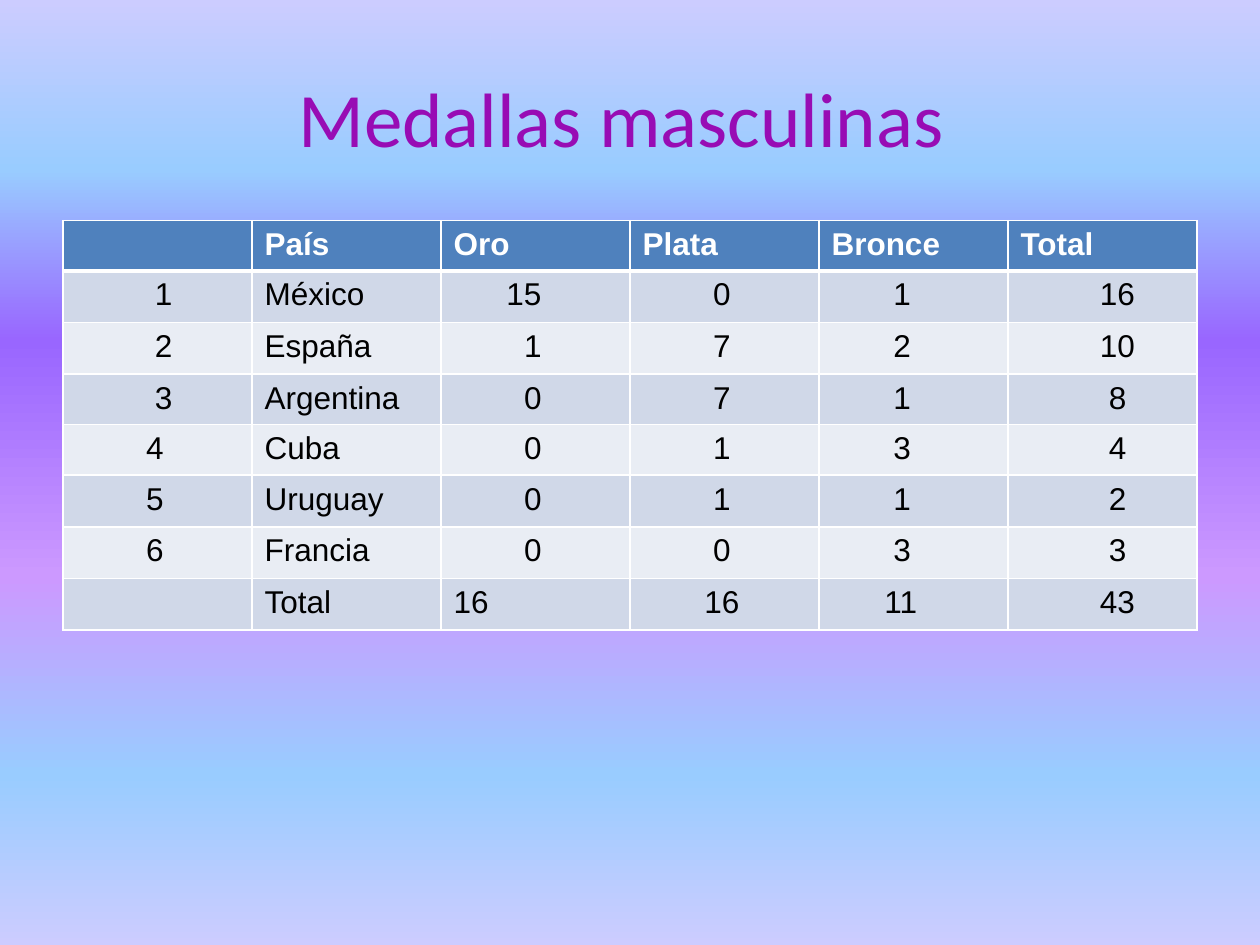
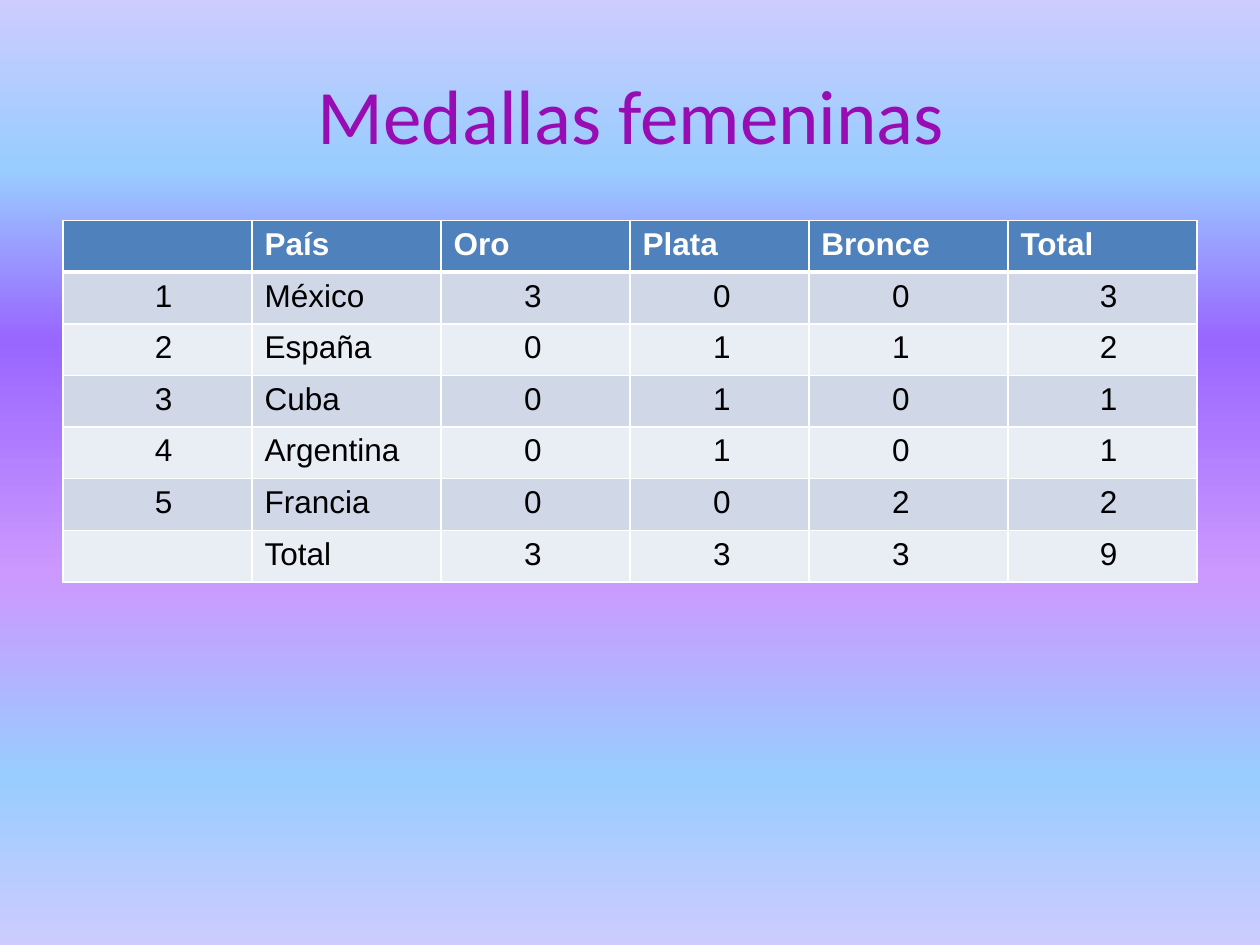
from dataclasses import dataclass, field

from lxml.etree import SubElement
from pptx import Presentation
from pptx.dml.color import RGBColor
from pptx.enum.text import MSO_ANCHOR, PP_ALIGN
from pptx.oxml.ns import qn
from pptx.slide import Slide, SlideMaster
from pptx.table import _Cell
from pptx.text.text import _Paragraph
from pptx.util import Emu, Pt

PX = 9144  # one px is a hundredth of an inch

PURPLE = RGBColor(0x98, 0x0C, 0xB4)
HEADER_BLUE = RGBColor(0x4F, 0x81, 0xBD)
BAND_DARK = RGBColor(0xD0, 0xD8, 0xE8)
BAND_LIGHT = RGBColor(0xE9, 0xED, 0xF4)
WHITE = RGBColor(0xFF, 0xFF, 0xFF)
BLACK = RGBColor(0x00, 0x00, 0x00)
LAVENDER = RGBColor(0xCC, 0xCC, 0xFF)
SKY = RGBColor(0x99, 0xCC, 0xFF)
VIOLET = RGBColor(0x99, 0x66, 0xFF)
ORCHID = RGBColor(0xCC, 0x99, 0xFF)
BACKGROUND_STOPS = ((0, LAVENDER), (18, SKY), (36, VIOLET),
                    (61, ORCHID), (82, SKY), (100, LAVENDER))

HEADINGS = ("", "País", "Oro", "Plata", "Bronce", "Total")
COUNTRY_COLUMN = 1
TABLE_LEFT, TABLE_TOP = 50, 175
TITLE_WIDTH, TITLE_HEIGHT = 900, 125
CELL_MARGIN = 10
HALF_DIGIT = 7


@dataclass(frozen=True)
class MedalPage:
    """axes: centre line of the figures in each column, from the cell margin.
    shifts: figures moved off that line, by (row, column)."""
    title: str
    title_left: int
    title_top: int
    columns: tuple[int, ...]
    row_heights: tuple[int, ...]
    axes: tuple[int, ...]
    rows: tuple[tuple[str, ...], ...]
    shifts: dict[tuple[int, int], int] = field(default_factory=dict)


PAGES = (
    MedalPage(
        "Medallas masculinas ", 50, 30,
        columns=(150,) * 6,
        row_heights=(39, 41, 41, 38, 38, 41, 41, 41),
        axes=(70, 0, 63, 63, 56, 77),
        rows=(
            ("1", "México", "15", "0", "1", "16"),
            ("2", "España", "1", "7", "2", "10"),
            ("3", "Argentina", "0", "7", "1", "8"),
            ("4", "Cuba", "0", "1", "3", "4"),
            ("5", "Uruguay", "0", "1", "1", "2"),
            ("6", "Francia", "0", "0", "3", "3"),
            ("", "Total", "16", "16", "11", "43"),
        ),
        shifts={(1, 2): -7, (4, 0): -7, (5, 0): -7, (6, 0): -7, (7, 2): -49},
    ),
    MedalPage(
        "Medallas femeninas", 51, 28,
        columns=(150, 150, 150, 142, 158, 150),
        row_heights=(41,) * 7,
        axes=(70, 0, 63, 63, 63, 70),
        rows=(
            ("1", "México", "3", "0", "0", "3"),
            ("2", "España", "0", "1", "1", "2"),
            ("3", "Cuba", "0", "1", "0", "1"),
            ("4", "Argentina", "0", "1", "0", "1"),
            ("5", "Francia", "0", "0", "2", "2"),
            ("", "Total", "3", "3", "3", "9"),
        ),
    ),
)


def px(length: int) -> Emu:
    return Emu(length * PX)


def paint_background(master: SlideMaster) -> None:
    fill = master.background.fill
    fill.gradient()
    fill.gradient_angle = 270
    stops = master.element.find(".//" + qn("a:gsLst"))
    for stop in list(stops):
        stops.remove(stop)
    for percent, color in BACKGROUND_STOPS:
        stop = SubElement(stops, qn("a:gs"), pos=str(percent * 1000))
        SubElement(stop, qn("a:srgbClr"), val=str(color))


def add_span(para: _Paragraph, text: str, font: str, size: int,
             color: RGBColor, bold: bool = False) -> None:
    span = para.add_run()
    span.text = text
    span.font.name = font
    span.font.size = Pt(size)
    span.font.bold = bold
    span.font.color.rgb = color


def add_title(page: Slide, medals: MedalPage) -> None:
    box = page.shapes.add_textbox(px(medals.title_left), px(medals.title_top),
                                  px(TITLE_WIDTH), px(TITLE_HEIGHT))
    frame = box.text_frame
    frame.word_wrap = True
    frame.vertical_anchor = MSO_ANCHOR.MIDDLE
    para = frame.paragraphs[0]
    para.alignment = PP_ALIGN.CENTER
    add_span(para, medals.title, "Calibri", 44, PURPLE)


def set_borders(cell: _Cell, top: int, bottom: int) -> None:
    """Draw white borders, with the top and bottom widths in points."""
    properties = cell._tc.get_or_add_tcPr()
    for side, width in (("L", 1), ("R", 1), ("T", top), ("B", bottom)):
        line = SubElement(properties, qn(f"a:ln{side}"), w=str(Pt(width)))
        SubElement(SubElement(line, qn("a:solidFill")), qn("a:srgbClr"), val=str(WHITE))


def fill_cell(cell: _Cell, text: str, row: int, indent: int) -> None:
    is_header = row == 0
    set_borders(cell, top=3 if row == 1 else 1, bottom=3 if is_header else 1)
    cell.fill.solid()
    band = BAND_DARK if row % 2 else BAND_LIGHT
    cell.fill.fore_color.rgb = HEADER_BLUE if is_header else band
    cell.margin_left = px(CELL_MARGIN + indent)
    para = cell.text_frame.paragraphs[0]
    if text:
        add_span(para, text, "Arial", 18, WHITE if is_header else BLACK, is_header)


def add_medal_table(page: Slide, medals: MedalPage) -> None:
    rows = (HEADINGS, *medals.rows)
    table = page.shapes.add_table(
        len(rows), len(HEADINGS), px(TABLE_LEFT), px(TABLE_TOP),
        px(sum(medals.columns)), px(sum(medals.row_heights))).table
    for column, width in zip(table.columns, medals.columns):
        column.width = px(width)
    for table_row, height in zip(table.rows, medals.row_heights):
        table_row.height = px(height)
    for row, texts in enumerate(rows):
        for column, text in enumerate(texts):
            indent = 0
            if row > 0 and text and column != COUNTRY_COLUMN:
                shift = medals.shifts.get((row, column), 0)
                indent = max(0, medals.axes[column] - HALF_DIGIT * len(text) + shift)
            fill_cell(table.cell(row, column), text, row, indent)


def main() -> None:
    deck = Presentation()
    deck.slide_width, deck.slide_height = px(1000), px(750)
    paint_background(deck.slide_master)
    for medals in PAGES:
        page = deck.slides.add_slide(deck.slide_layouts[6])
        add_title(page, medals)
        add_medal_table(page, medals)
    deck.save("out.pptx")


if __name__ == "__main__":
    main()
